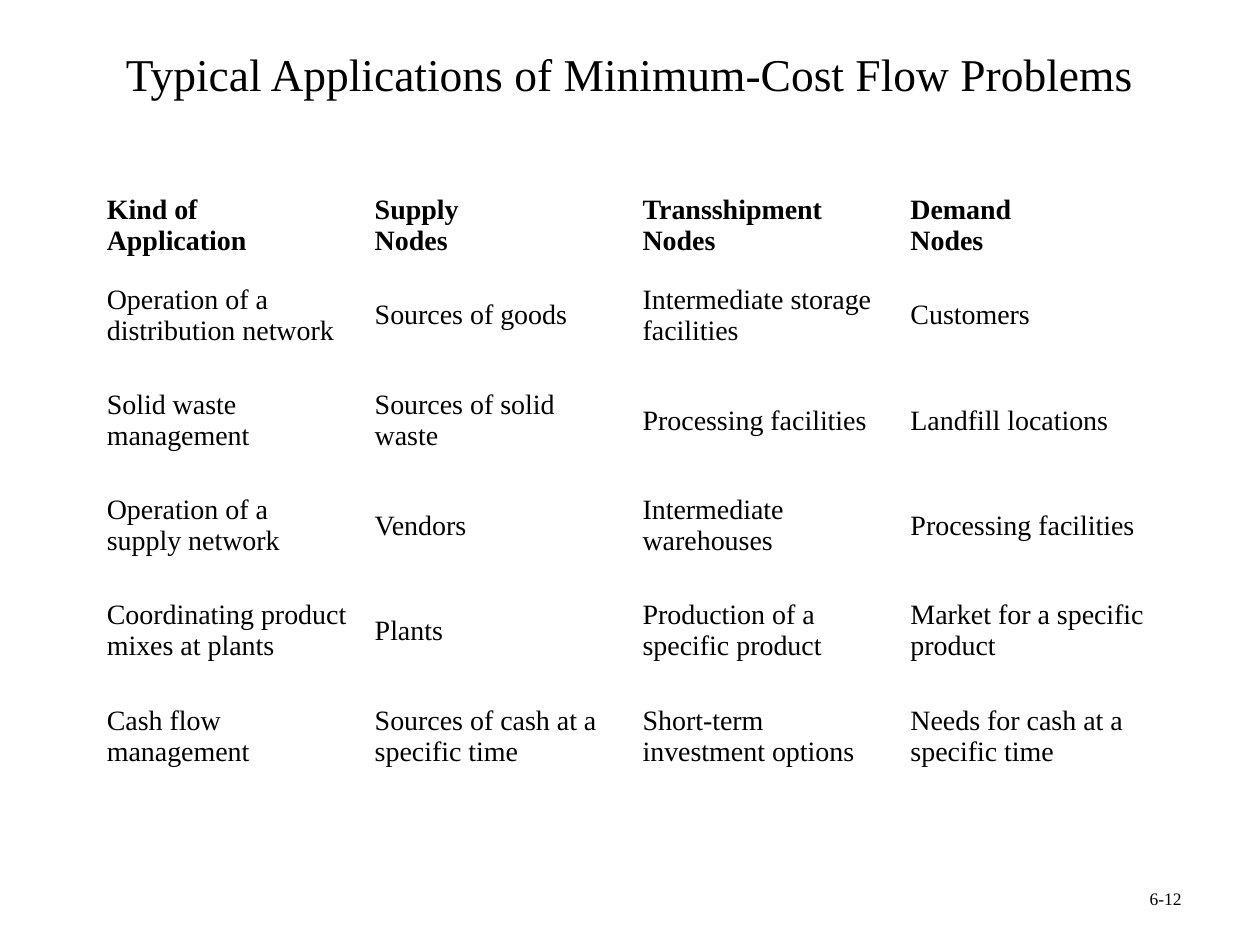
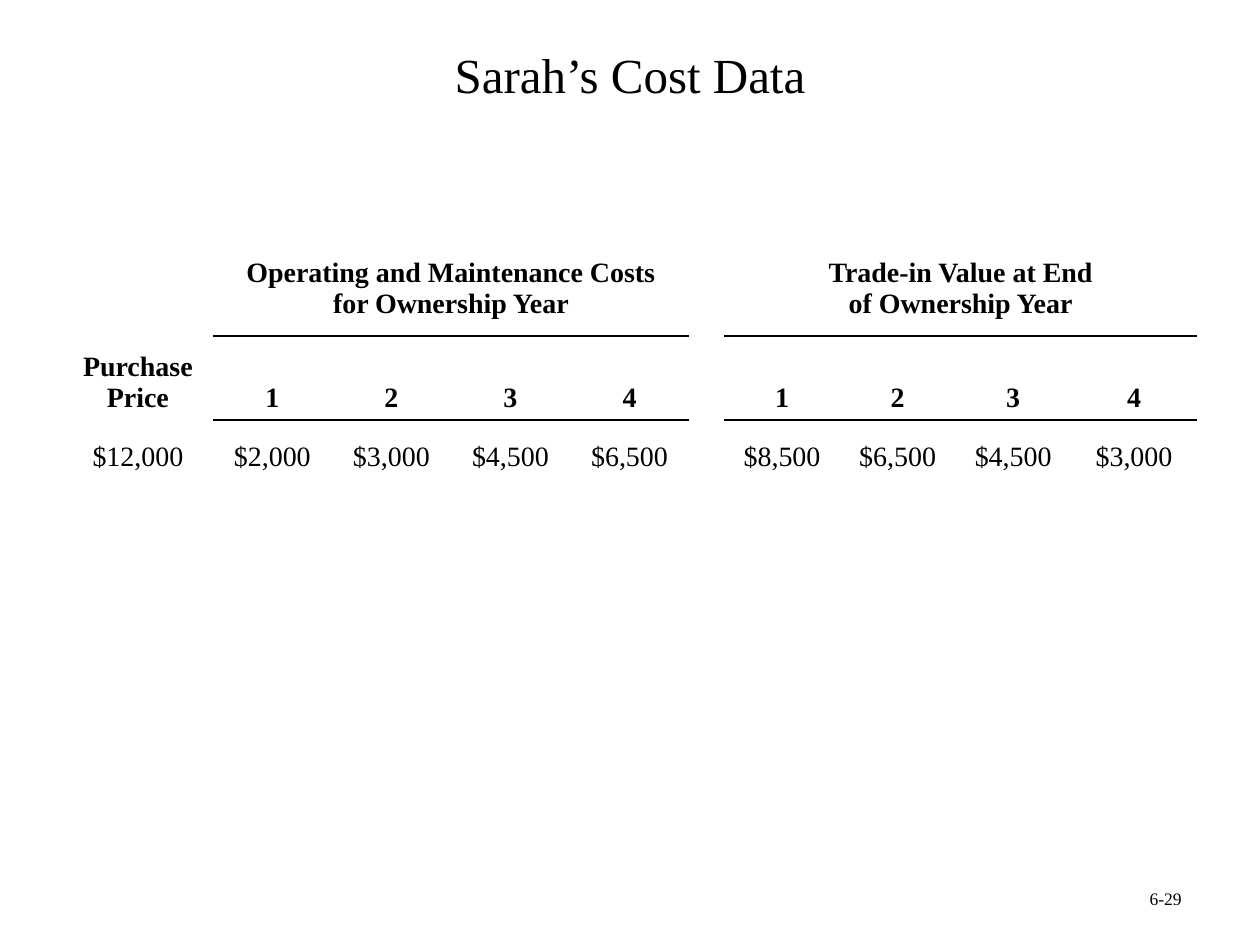
import pptx
import pptx.dml.color
import pptx.enum.text
import pptx.oxml
import pptx.oxml.ns
import pptx.util

Cm = pptx.util.Cm
Pt = pptx.util.Pt
ALIGN = pptx.enum.text.PP_ALIGN
ANCHOR = pptx.enum.text.MSO_ANCHOR

BLACK = pptx.dml.color.RGBColor(0x00, 0x00, 0x00)
FONT = "Times New Roman"
TITLE_ONLY = 5
NO_STYLE = "{2D5ABB26-0587-4C30-8999-92F81FD0307C}"

APPLICATIONS = [
    ["Kind of\nApplication", "Supply\nNodes", "Transshipment Nodes", "Demand\nNodes"],
    ["Operation of a distribution network", "Sources of goods",
     "Intermediate storage facilities", "Customers"],
    ["Solid waste management", "Sources of solid waste",
     "Processing facilities", "Landfill locations"],
    ["Operation of a supply network", "Vendors",
     "Intermediate warehouses", "Processing facilities"],
    ["Coordinating product mixes at plants", "Plants",
     "Production of a specific product", "Market for a specific product"],
    ["Cash flow management", "Sources of cash at a specific time",
     "Short-term investment options", "Needs for cash at a specific time"],
]

YEARS = ["1", "2", "3", "4"]
COSTS = [
    ["", "Operating and Maintenance Costs\nfor Ownership Year", "", "", "", "",
     "Trade-in Value at End\nof Ownership Year", "", "", ""],
    ["Purchase\nPrice", *YEARS, "", *YEARS],
    ["$12,000", "$2,000", "$3,000", "$4,500", "$6,500", "",
     "$8,500", "$6,500", "$4,500", "$3,000"],
]
COST_GROUPS = [(1, 4), (6, 9)]


class SlideBuilder:
    def __init__(self):
        self.deck = pptx.Presentation()
        self.deck.slide_width = Cm(25.4)
        self.deck.slide_height = Cm(19.05)
        self.slide = None

    def start(self, title, title_size, page_number):
        self.slide = self.deck.slides.add_slide(self.deck.slide_layouts[TITLE_ONLY])
        box = self.slide.shapes.title
        box.left, box.top, box.width, box.height = Cm(1.27), Cm(0.64), Cm(22.86), Cm(1.69)
        box.text_frame.vertical_anchor = ANCHOR.MIDDLE
        self.add_text(box.text_frame, title, title_size)
        self.page_number(page_number)

    def page_number(self, number):
        box = self.slide.shapes.add_textbox(Cm(22.23), Cm(17.78), Cm(2.54), Cm(0.85))
        self.add_text(box.text_frame, number, 10)

    def add_text(self, frame, text, size, bold=False, align=ALIGN.CENTER):
        frame.word_wrap = True
        para = frame.paragraphs[0]
        para.alignment = align
        for index, line in enumerate(text.split("\n")):
            if index:
                para.add_line_break()
            span = para.add_run()
            span.text = line
            span.font.name = FONT
            span.font.size = Pt(size)
            span.font.bold = bold
            span.font.color.rgb = BLACK

    def table(self, rows, left, top, widths, heights, anchors, bold_rows, align):
        frame = self.slide.shapes.add_table(
            len(rows), len(widths), Cm(left), Cm(top), Cm(sum(widths)), Cm(sum(heights)))
        table = frame.table
        table.first_row = table.horz_banding = False
        table._tbl.tblPr.find(pptx.oxml.ns.qn("a:tableStyleId")).text = NO_STYLE
        for column, width in zip(table.columns, widths):
            column.width = Cm(width)
        for index, values in enumerate(rows):
            table.rows[index].height = Cm(heights[index])
            for cell, text in zip(table.rows[index].cells, values):
                cell.fill.background()
                cell.vertical_anchor = anchors[index]
                if text:
                    self.add_text(cell.text_frame, text, 16, index < bold_rows, align)
        return table

    def border(self, cell, side):
        line = pptx.oxml.parse_xml(
            f'<a:{side} {pptx.oxml.ns.nsdecls("a")} w="{Pt(1)}">'
            f'<a:solidFill><a:srgbClr val="{BLACK}"/></a:solidFill></a:{side}>')
        cell._tc.get_or_add_tcPr().insert(0, line)

    def group_heading(self, table, first, last):
        table.cell(0, first).merge(table.cell(0, last))
        for column in range(first, last + 1):
            self.border(table.cell(0, column), "lnB")
            self.border(table.cell(1, column), "lnT")


def main():
    builder = SlideBuilder()

    builder.start("Typical Applications of Minimum-Cost Flow Problems", 26, "6-12")
    builder.table(
        APPLICATIONS, 1.9, 3.18, [5.4] * 4, [2.12] * 6,
        [ANCHOR.BOTTOM] + [ANCHOR.MIDDLE] * 5, 1, ALIGN.LEFT)

    builder.start("Sarah’s Cost Data", 28, "6-29")
    cost_table = builder.table(
        COSTS, 1.27, 4.87, [3.02] + [2.4] * 4 + [0.71] + [2.33] * 3 + [2.54],
        [1.9, 1.7, 1.48], [ANCHOR.MIDDLE, ANCHOR.BOTTOM, ANCHOR.MIDDLE], 2, ALIGN.CENTER)
    for first, last in COST_GROUPS:
        builder.group_heading(cost_table, first, last)

    builder.deck.save("out.pptx")


if __name__ == "__main__":
    main()
